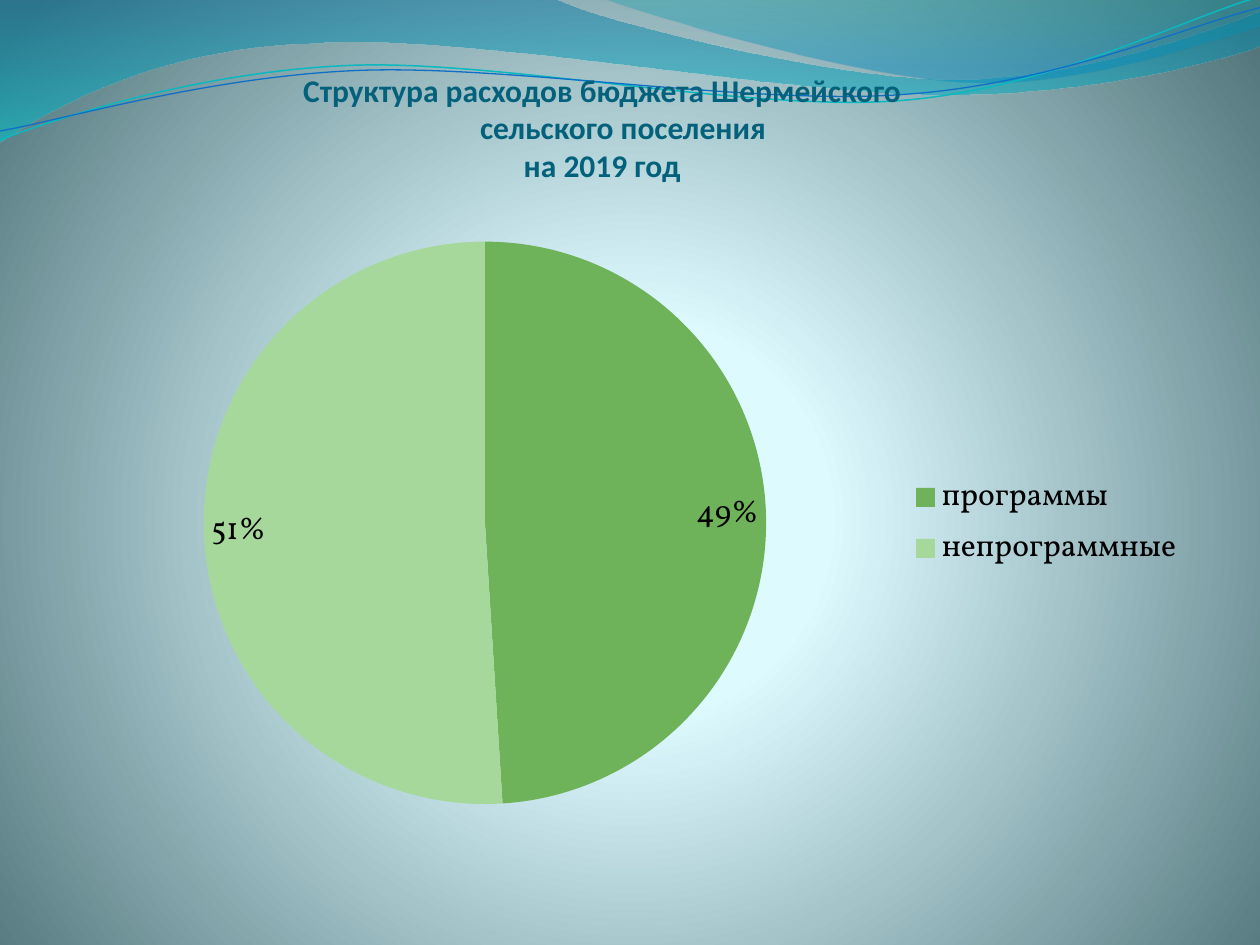
import dataclasses

import lxml.etree
import pptx
import pptx.chart.data
import pptx.dml.color
import pptx.enum.chart
import pptx.enum.text
import pptx.oxml.ns
import pptx.util

Inches = pptx.util.Inches
qn = pptx.oxml.ns.qn
sub = lxml.etree.SubElement


@dataclasses.dataclass(frozen=True)
class Theme:
    title_font: str = "Calibri"
    chart_font: str = "Vollkorn"
    size: int = 18
    title_color: str = "04617B"
    chart_color: str = "000000"
    slice_colors: tuple = ("6EB35A", "A7D89B")
    teal_line: str = "0AB8BF"
    blue_line: str = "0F6FC6"
    # Gradient stops: position %, colour, opacity %
    glow: tuple = ((0, "DEFBFF", 100), (25, "DDFAFF", 100), (100, "52767C", 100))
    left_wave: tuple = ((0, "0074A1", 45), (100, "00C6CF", 55))
    right_wave: tuple = ((0, "00A1A9", 30), (80, "008BBF", 45))


def rgb(color):
    return pptx.dml.color.RGBColor.from_string(color)


class SlideBuilder:
    def __init__(self, page, theme):
        self.page = page
        self.theme = theme

    def set_gradient(self, parent, stops, center=None):
        """Swap the solid fill in parent for a vertical or a circular gradient."""
        solid = parent.find(qn("a:solidFill"))
        gradient = parent.makeelement(qn("a:gradFill"), {"rotWithShape": "1"})
        stop_list = sub(gradient, qn("a:gsLst"))
        for position, color, opacity in stops:
            stop = sub(stop_list, qn("a:gs"), pos=str(position * 1000))
            color_node = sub(stop, qn("a:srgbClr"), val=color)
            if opacity < 100:
                sub(color_node, qn("a:alpha"), val=str(opacity * 1000))
        if center:
            circle = sub(gradient, qn("a:path"), {"path": "circle"})
            sub(circle, qn("a:fillToRect"),
                {side: str(value * 1000) for side, value in zip("ltrb", center)})
        else:
            sub(gradient, qn("a:lin"), ang="5400000", scaled="0")
        parent.replace(solid, gradient)

    def background(self, stops, center):
        self.page.background.fill.solid()
        properties = next(self.page.element.iter(qn("p:bgPr")))
        self.set_gradient(properties, stops, center)

    def outline(self, steps, closed):
        """Steps are points (x, y) or Bezier curves (x1, y1, x2, y2, x, y)."""
        ends = [tuple(map(Inches, step[-2:])) for step in steps]
        builder = self.page.shapes.build_freeform(*ends[0])
        builder.add_line_segments(ends[1:], close=closed)
        shape = builder.convert_to_shape()
        shape.shadow.inherit = False
        # Bend the segments that have control points
        segments = list(shape.element.iter(qn("a:lnTo")))
        for step, segment in zip(steps[1:], segments):
            if len(step) == 2:
                continue
            curve = segment.makeelement(qn("a:cubicBezTo"))
            for x, y in zip(step[::2], step[1::2]):
                sub(curve, qn("a:pt"), x=str(Inches(x) - shape.left),
                    y=str(Inches(y) - shape.top))
            segment.getparent().replace(segment, curve)
        return shape

    def wave(self, steps, stops):
        shape = self.outline(steps, True)
        shape.line.fill.background()
        shape.fill.solid()
        self.set_gradient(shape.element.spPr, stops)

    def ribbon(self, steps, color, width):
        shape = self.outline(steps, False)
        shape.fill.background()
        shape.line.color.rgb = rgb(color)
        shape.line.width = pptx.util.Pt(width)

    def title(self, lines, left, top, width, height):
        """Each line is its text and its left indent in inches."""
        box = self.page.shapes.add_textbox(*map(Inches, (left, top, width, height)))
        frame = box.text_frame
        frame.word_wrap = True
        frame.vertical_anchor = pptx.enum.text.MSO_ANCHOR.BOTTOM
        frame.margin_left = frame.margin_right = frame.margin_bottom = 0
        frame.margin_top = Inches(0.05)
        for index, (text, indent) in enumerate(lines):
            para = frame.add_paragraph() if index else frame.paragraphs[0]
            para.alignment = pptx.enum.text.PP_ALIGN.CENTER
            if indent:
                para._p.get_or_add_pPr().set("marL", str(Inches(indent)))
            span = para.add_run()
            span.text = text
            span.font.name = self.theme.title_font
            span.font.size = pptx.util.Pt(self.theme.size)
            span.font.bold = True
            span.font.color.rgb = rgb(self.theme.title_color)

    def pie(self, shares, left, top, width, height):
        data = pptx.chart.data.CategoryChartData(number_format="0%")
        data.categories = list(shares)
        data.add_series("Series 1", list(shares.values()))
        chart = self.page.shapes.add_chart(
            pptx.enum.chart.XL_CHART_TYPE.PIE,
            *map(Inches, (left, top, width, height)), data).chart
        chart.has_title = False
        chart.font.name = self.theme.chart_font
        chart.font.size = pptx.util.Pt(self.theme.size)
        chart.font.color.rgb = rgb(self.theme.chart_color)
        chart.has_legend = True
        chart.legend.position = pptx.enum.chart.XL_LEGEND_POSITION.RIGHT
        chart.legend.include_in_layout = False
        plot = chart.plots[0]
        plot.vary_by_categories = True
        plot.has_data_labels = True
        labels = plot.data_labels
        labels.show_value = True
        labels.show_percentage = False
        labels.number_format = "0%"
        labels.number_format_is_linked = False
        labels.position = pptx.enum.chart.XL_LABEL_POSITION.INSIDE_END
        for index, color in enumerate(self.theme.slice_colors):
            fill = plot.series[0].points[index].format.fill
            fill.solid()
            fill.fore_color.rgb = rgb(color)


def main():
    deck = pptx.Presentation()
    deck.slide_width, deck.slide_height = Inches(10), Inches(7.5)
    theme = Theme()
    slide = SlideBuilder(deck.slides.add_slide(deck.slide_layouts[6]), theme)

    # Background glow
    slide.background(theme.glow, (10, 110, 10, 100))

    # Waves along the top edge
    slide.wave([(0, 0), (4.4, -0.01), (4.76, 0.17, 6.64, 0.63, 7.58, 0.63),
                (8.53, 0.63, 9.58, 0.26, 10, 0.09), (10.01, 0.36),
                (9.83, 0.44, 8.7, 0.76, 7.46, 0.75),
                (6.22, 0.75, 3.82, 0.28, 2.57, 0.34),
                (1.29, 0.36, 0.46, 0.83, -0.01, 1.13)], theme.left_wave)
    slide.wave([(4.79, -0.01), (5.09, 0.11, 6.82, 0.62, 7.69, 0.65),
                (8.56, 0.69, 9.61, 0.32, 10, 0.21), (10, 0)], theme.right_wave)

    # Thin ribbons
    slide.ribbon([(0, 1.11), (0.48, 0.93, 1.58, 0.57, 2.77, 0.52),
                  (3.95, 0.47, 5.93, 0.89, 7.13, 0.8),
                  (8.33, 0.71, 9.38, 0.15, 9.98, -0.02)], theme.teal_line, 0.85)
    slide.ribbon([(0, 1.04), (0.47, 0.96, 1.64, 0.61, 2.83, 0.56),
                  (4.03, 0.51, 5.97, 0.84, 7.17, 0.75),
                  (8.36, 0.67, 9.41, 0.21, 10, 0.06)], theme.blue_line, 0.75)

    # Title
    slide.title([("Структура расходов бюджета Шермейского", 0),
                 ("сельского поселения", 0.33),
                 ("на 2019 год", 0)], 0.83, 0.44, 7.9, 1.02)

    # Spending chart
    slide.pie({"программы": 0.49, "непрограммные": 0.51}, 0.51, 1.78, 8.99, 4.74)

    deck.save("out.pptx")


if __name__ == "__main__":
    main()
